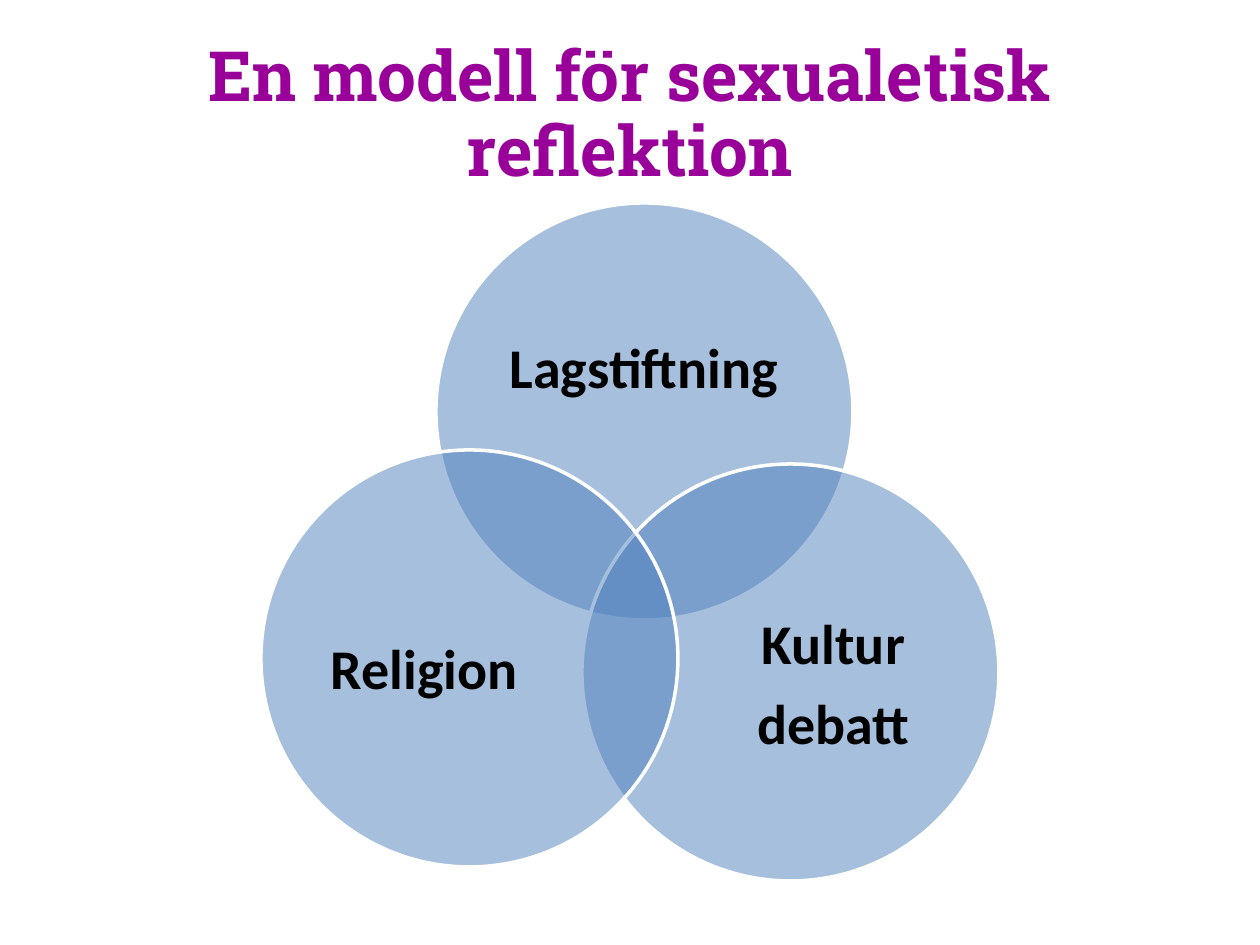
"""Build a slide with a three-circle model for reflection on sexual ethics."""
import pptx
import pptx.util
import pptx.dml.color
import pptx.enum.shapes
import pptx.enum.text
import pptx.oxml.ns
from lxml import etree

RGB = pptx.dml.color.RGBColor
PURPLE = RGB(0x99, 0x00, 0x99)
BLUE = RGB(0x4F, 0x81, 0xBD)
WHITE = RGB(0xFF, 0xFF, 0xFF)
BLACK = RGB(0x00, 0x00, 0x00)

SCALE = 914400 / 126
SIZE = (1260, 945)
DIAM = 417
ALPHA = 50000
TITLE = ("En modell för sexualetisk reflektion", (63, 38, 1134, 157))
TOPICS = [
    (["Lagstiftning"], (436, 203), (491, 276, 306, 188)),
    (["Kultur", "debatt"], (582, 464), (709, 572, 249, 229)),
    (["Religion"], (261, 450), (300, 557, 249, 229)),
]
HEAD = {"name": "Roboto Slab", "size": pptx.util.Pt(39.6), "bold": True}
LABEL = {"name": "Calibri", "size": pptx.util.Pt(32), "bold": True}
CENTER = {"alignment": pptx.enum.text.PP_ALIGN.CENTER, "line_spacing": 0.9}
SPACED = {**CENTER, "space_after": pptx.util.Pt(11.2)}
FRAME = {"word_wrap": True, "vertical_anchor": pptx.enum.text.MSO_ANCHOR.MIDDLE}
SIDES = ("left", "right", "top", "bottom")
TIGHT = {**FRAME, **{f"margin_{side}": 0 for side in SIDES}}


def px(*vals):
    return [round(val * SCALE) for val in vals]


def apply(target, values):
    for name, value in values.items():
        setattr(target, name, value)


def add_text(slide, lines, box, frame, para, font, color):
    text = slide.shapes.add_textbox(*px(*box)).text_frame
    apply(text, frame)
    text.text = "\n".join(lines)
    for item in text.paragraphs:
        apply(item, para)
        for run in item.runs:
            apply(run.font, font)
            run.font.color.rgb = color


def add_circle(slide, left, top):
    oval = pptx.enum.shapes.MSO_SHAPE.OVAL
    shape = slide.shapes.add_shape(oval, *px(left, top, DIAM, DIAM))
    shape.shadow.inherit = False
    shape.fill.solid()
    shape.fill.fore_color.rgb = BLUE
    shape.line.color.rgb = WHITE
    shape.line.width = pptx.util.Pt(2)
    tint = shape.element.spPr.xpath("./a:solidFill/a:srgbClr")[0]
    etree.SubElement(tint, pptx.oxml.ns.qn("a:alpha"), val=str(ALPHA))


def main():
    deck = pptx.Presentation()
    deck.slide_width, deck.slide_height = px(*SIZE)
    slide = deck.slides.add_slide(deck.slide_layouts[6])
    title, box = TITLE
    add_text(slide, [title], box, FRAME, CENTER, HEAD, PURPLE)
    for lines, corner, box in TOPICS:
        add_circle(slide, *corner)
        add_text(slide, lines, box, TIGHT, SPACED, LABEL, BLACK)
    deck.save("out.pptx")


if __name__ == "__main__":
    main()
